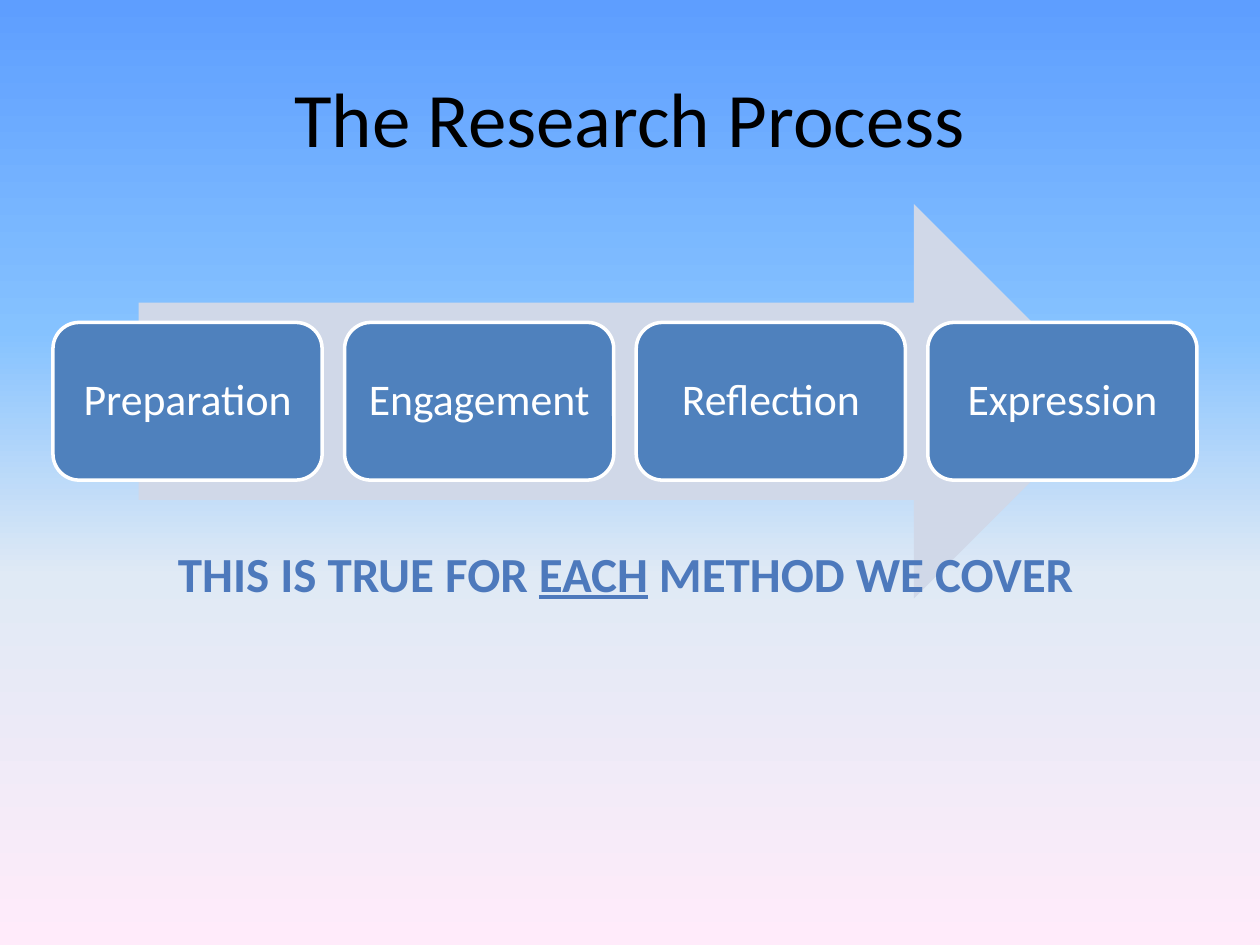
import pptx
import pptx.util
import pptx.dml.color
import pptx.enum.shapes
import pptx.enum.text
import pptx.oxml.ns
import lxml.etree
from dataclasses import dataclass

Inches, Pt = pptx.util.Inches, pptx.util.Pt
qn = pptx.oxml.ns.qn
SHAPES = pptx.enum.shapes.MSO_SHAPE
WIDTH, HEIGHT = 10, 7.5


@dataclass(frozen=True)
class Theme:
    font: str = "Calibri"
    title_size: int = 44
    step_size: int = 25
    note_size: int = 28
    title: str = "000000"
    arrow: str = "D0D8E8"
    step: str = "4F81BD"
    light: str = "FFFFFF"
    outline: int = 2
    sky: tuple = ((0, "5E9EFF"), (35, "85C2FF"), (61, "E0EAF5"), (100, "FFEBFA"))
    note: tuple = ((0, "7494C9"), (49, "4D79BC"), (50, "346AAA"),
                   (92, "325F94"), (100, "315D91"))


THEME = Theme()


def rgb(code):
    return pptx.dml.color.RGBColor.from_string(code)


def inches(box):
    return [Inches(length) for length in box]


def paint_gradient(fill, owner, stops):
    """Fill top to bottom with (percent, colour) stops."""
    fill.gradient()
    fill.gradient_angle = 270
    stop_list = next(owner.iter(qn("a:gsLst")))
    for old_stop in list(stop_list):
        stop_list.remove(old_stop)
    for percent, code in stops:
        stop = lxml.etree.SubElement(stop_list, qn("a:gs"), pos=str(percent * 1000))
        lxml.etree.SubElement(stop, qn("a:srgbClr"), val=code)


def style_line(frame, size, color=None, bold=None):
    """Centre the frame's single paragraph and set its font."""
    frame.vertical_anchor = pptx.enum.text.MSO_ANCHOR.MIDDLE
    line = frame.paragraphs[0]
    line.alignment = pptx.enum.text.PP_ALIGN.CENTER
    line.font.name, line.font.size, line.font.bold = THEME.font, Pt(size), bold
    if color:
        line.font.color.rgb = rgb(color)
    return line


def add_block(slide, kind, box, color):
    block = slide.shapes.add_shape(kind, *inches(box))
    block.shadow.inherit = False
    block.fill.solid()
    block.fill.fore_color.rgb = rgb(color)
    block.line.fill.background()
    return block


def add_title(slide, box, wording):
    frame = slide.shapes.add_textbox(*inches(box)).text_frame
    frame.word_wrap = True
    style_line(frame, THEME.title_size, THEME.title).add_run().text = wording


def add_process(slide, box, steps):
    """Arrow over the full height, with a row of equal step cards in front."""
    left, top, width, height = box
    # Arrow spans 85% of the row
    add_block(slide, SHAPES.RIGHT_ARROW,
              (left + width * 0.075, top, width * 0.85, height), THEME.arrow)
    # Each gap is one twelfth of a card
    card_width = width / (len(steps) + (len(steps) - 1) / 12)
    pitch = card_width * 13 / 12
    card_height = height * 0.4
    for column, step in enumerate(steps):
        card = add_block(slide, SHAPES.ROUNDED_RECTANGLE,
                         (left + column * pitch, top + height * 0.3,
                          card_width, card_height), THEME.step)
        card.line.color.rgb = rgb(THEME.light)
        card.line.width = Pt(THEME.outline)
        frame = card.text_frame
        frame.word_wrap = True
        frame.margin_left = frame.margin_right = Inches(0.1)
        frame.margin_top = frame.margin_bottom = Inches(0.1)
        label = style_line(frame, THEME.step_size, THEME.light)
        label.line_spacing = 0.9
        label.add_run().text = step


def add_note(slide, box, parts):
    """One bold line of (wording, underlined) parts."""
    frame = slide.shapes.add_textbox(*inches(box)).text_frame
    frame.word_wrap = False
    line = style_line(frame, THEME.note_size, bold=True)
    for wording, underlined in parts:
        part = line.add_run()
        part.text = wording
        if underlined:
            part.font.underline = True
        paint_gradient(part.font.fill, part._r, THEME.note)


def main():
    deck = pptx.Presentation()
    deck.slide_width, deck.slide_height = inches((WIDTH, HEIGHT))
    slide = deck.slides.add_slide(deck.slide_layouts[6])
    paint_gradient(slide.background.fill, slide.element, THEME.sky)

    # Title
    add_title(slide, (WIDTH * 0.05, HEIGHT * 0.04, WIDTH * 0.9, 1.25),
              "The Research Process")
    # Process
    add_process(slide, (0.42, 1.62, 9.08, 3.13),
                ["Preparation", "Engagement", "Reflection", "Expression"])
    # Closing note
    add_note(slide, (0.48, 4.26, 8.97, 0.57),
             [("THIS IS TRUE FOR ", False), ("EACH", True),
              (" METHOD WE COVER", False)])
    deck.save("out.pptx")


if __name__ == "__main__":
    main()
